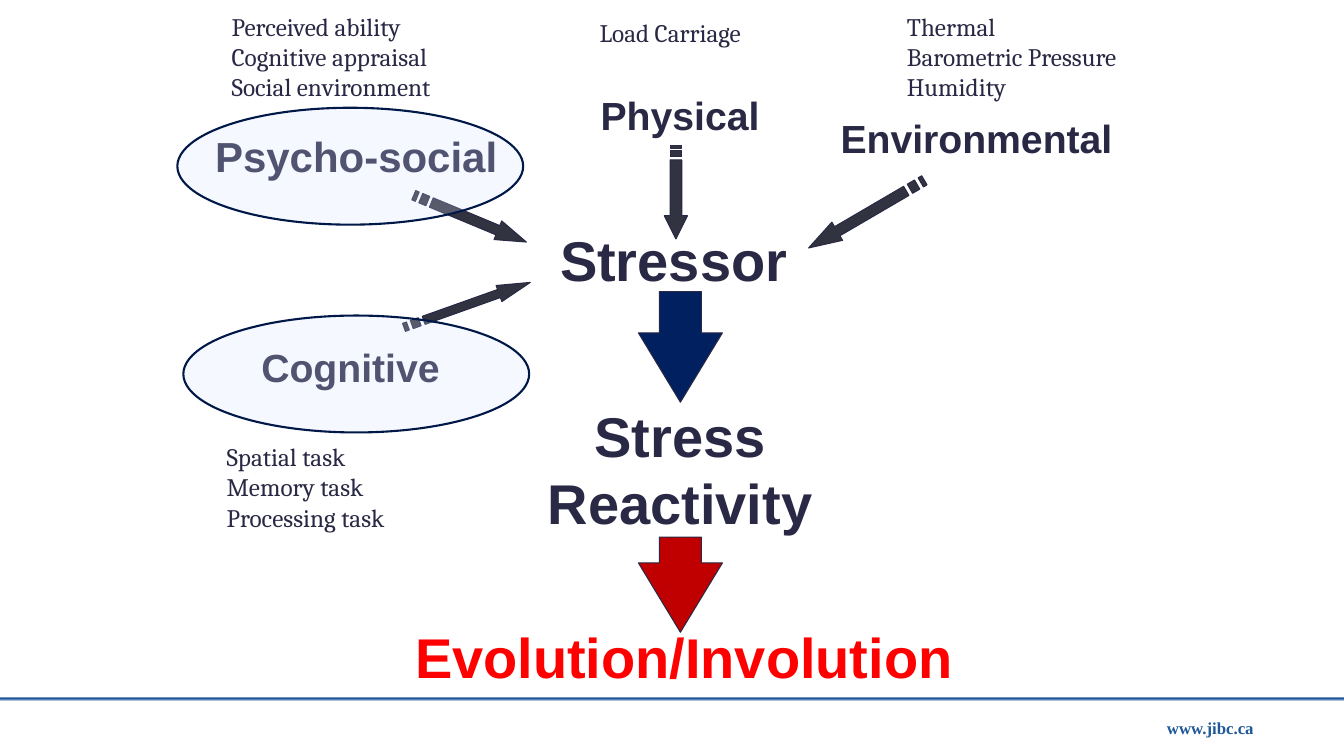
from dataclasses import dataclass

from lxml.etree import SubElement
from pptx import Presentation
from pptx.dml.color import RGBColor
from pptx.enum.shapes import MSO_SHAPE as Preset
from pptx.enum.text import PP_ALIGN as Align
from pptx.oxml.ns import qn
from pptx.util import Pt

COLORS = {
    "ink": "292945", "arrow": "313340", "navy": "002060", "crimson": "C00000",
    "red": "FF0000", "halo": "D6E3FF", "halo_edge": "001847",
    "rule": "1F5898", "rule_shade": "003399",
}


@dataclass
class Label:
    lines: tuple
    left: float
    top: float
    width: float
    height: float
    size: float
    font: str = "Arial"
    color: str = "ink"
    bold: bool = True
    align: Align = Align.CENTER


@dataclass
class Block:
    preset: Preset
    left: float
    top: float
    width: float
    height: float
    fill: str
    edge: str = ""
    edge_width: float = 0
    opacity: int = 100
    adjustments: tuple = ()


@dataclass
class StripedArrow:
    left: float
    top: float
    length: float
    height: float
    rotation: float
    head: float


def note(left: float, top: float, height: float, *lines: str) -> Label:
    return Label(lines, left, top, 198.7, height, 18, "Cambria", bold=False, align=Align.LEFT)


def halo(left: float, top: float) -> Block:
    return Block(Preset.OVAL, left, top, 247, 83.5, "halo", "halo_edge", 1.5, 23)


def down_arrow(top: float, height: float, fill: str) -> Block:
    return Block(Preset.DOWN_ARROW, 456, top, 60, height, fill, "ink", 0.75,
                 adjustments=(0.5, 0.825))


def paint(shape, fill: str, edge: str, edge_width: float) -> None:
    shape.shadow.inherit = False
    shape.fill.solid()
    shape.fill.fore_color.rgb = RGBColor.from_string(COLORS[fill])
    if edge:
        shape.line.color.rgb = RGBColor.from_string(COLORS[edge])
        shape.line.width = Pt(edge_width)
    else:
        shape.line.fill.background()


def draw_label(page, label: Label) -> None:
    box = page.shapes.add_textbox(Pt(label.left), Pt(label.top), Pt(label.width), Pt(label.height))
    frame = box.text_frame
    frame.word_wrap = True
    for index, line in enumerate(label.lines):
        para = frame.add_paragraph() if index else frame.paragraphs[0]
        para.text = line
        para.alignment = label.align
        para.font.name = label.font
        para.font.size = Pt(label.size)
        para.font.bold = label.bold
        para.font.color.rgb = RGBColor.from_string(COLORS[label.color])


def draw_block(page, block: Block) -> None:
    shape = page.shapes.add_shape(block.preset, Pt(block.left), Pt(block.top),
                                  Pt(block.width), Pt(block.height))
    for index, value in enumerate(block.adjustments):
        shape.adjustments[index] = value
    paint(shape, block.fill, block.edge, block.edge_width)
    if block.opacity < 100:
        color = shape.fill._xPr.find(qn("a:solidFill"))[0]
        SubElement(color, qn("a:alpha")).set("val", str(block.opacity * 1000))


def draw_striped_arrow(page, arrow: StripedArrow) -> None:
    unit = arrow.length / 32
    neck = arrow.length - arrow.head
    upper, middle, lower = (arrow.height * part for part in (0.25, 0.5, 0.75))
    outlines = [
        [(neck, 0), (neck, upper), (5 * unit, upper), (5 * unit, lower),
         (neck, lower), (neck, arrow.height), (arrow.length, middle)],
        *([(start * unit, upper), (start * unit, lower), (end * unit, lower), (end * unit, upper)]
          for start, end in ((2, 4), (0, 1))),
    ]
    builder = None
    for outline in outlines:
        first, *rest = [(Pt(arrow.left + x), Pt(arrow.top + y)) for x, y in outline]
        if builder is None:
            builder = page.shapes.build_freeform(*first)
        else:
            builder.move_to(*first)
        builder.add_line_segments(rest, close=True)
    shape = builder.convert_to_shape()
    shape.rotation = arrow.rotation
    paint(shape, "arrow", "ink", 0.75)


ITEMS = [
    Block(Preset.RECTANGLE, 0, 498.2, 960, 1.5, "rule"),
    Block(Preset.RECTANGLE, 0, 499.7, 960, 0.75, "rule_shade", opacity=50),
    Label(("www.jibc.ca",), 826.5, 509, 122.4, 21.6, 12, "Times New Roman", "rule",
          align=Align.LEFT),
    Label(("Stressor",), 393, 157.7, 185.8, 55.4, 40, align=Align.LEFT),
    Label(("Stress Reactivity",), 380.8, 283, 210, 104.4, 40),
    down_arrow(208.3, 79, "navy"),
    StripedArrow(292.2, 149, 87.1, 14.4, 22.6, 22),
    Label(("Environmental",), 592.5, 77.8, 210, 41, 28),
    Label(("Psycho-social",), 145.4, 90, 218.2, 43.9, 30),
    Label(("Physical",), 380.8, 61.9, 210, 41, 28),
    StripedArrow(449.3, 128.9, 67, 16.6, 90, 16.6),
    StripedArrow(571, 145.4, 95.8, 15.1, 149.7, 23.7),
    down_arrow(383.6, 68, "crimson"),
    Label(("Evolution/Involution",), 281.5, 441.4, 414, 55.4, 40, color="red"),
    note(640.8, 4.3, 94.3, "Thermal", "Barometric Pressure", "Humidity"),
    note(158.4, 4.3, 72.7, "Perceived ability", "Cognitive appraisal", "Social environment"),
    halo(126.7, 77),
    Label(("Cognitive",), 145.4, 241.9, 210, 41, 28),
    StripedArrow(285.8, 211.7, 95.8, 12.2, 340.4, 23.7),
    halo(131, 225.4),
    note(421.2, 8.6, 51.1, "Load Carriage"),
    note(154.8, 311.8, 94.3, "Spatial task", "Memory task", "Processing task"),
]


def main() -> None:
    deck = Presentation()
    deck.slide_width, deck.slide_height = Pt(960), Pt(540)
    page = deck.slides.add_slide(deck.slide_layouts[6])
    painters = {Label: draw_label, Block: draw_block, StripedArrow: draw_striped_arrow}
    for item in ITEMS:
        painters[type(item)](page, item)
    deck.save("out.pptx")


if __name__ == "__main__":
    main()
